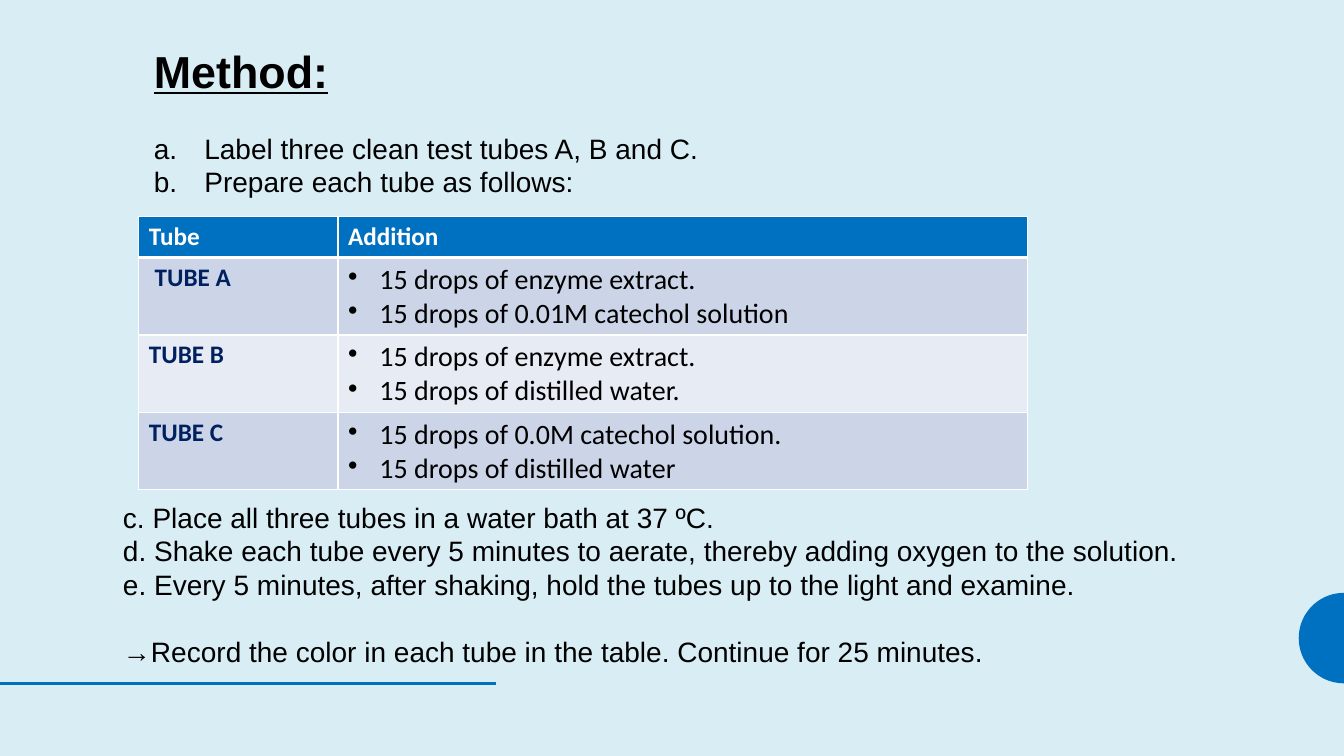
import math

from lxml import etree
from pptx import Presentation
from pptx import util as u
from pptx.dml.color import RGBColor
from pptx.enum import shapes, text
from pptx.oxml import ns

COLORS = {
    "background": "D9EDF5",
    "accent": "0070C0",
    "navy": "002060",
    "black": "000000",
    "white": "FFFFFF",
    "band_dark": "CCD5E8",
    "band_light": "E7EBF4",
}
PREPARATION = ["Label three clean test tubes A, B and C.", "Prepare each tube as follows:"]
STEPS = [
    "c. Place all three tubes in a water bath at 37 ºC.",
    "d. Shake each tube every 5 minutes to aerate, thereby adding oxygen to the solution.",
    "e. Every 5 minutes, after shaking, hold the tubes up to the light and examine.",
    "→Record the color in each tube in the table. Continue for 25 minutes.",
]
TUBES = [
    (" TUBE A", ["15 drops of enzyme extract.", "15 drops of 0.01M catechol solution"]),
    ("TUBE B", ["15 drops of enzyme extract.", "15 drops of distilled water."]),
    ("TUBE C", ["15 drops of 0.0M catechol solution.", "15 drops of distilled water"]),
]


def color(name):
    return RGBColor.from_string(COLORS[name])


def fill(target, name):
    target.fill.solid()
    target.fill.fore_color.rgb = color(name)


def style(para, size, name="black", font="Arial", bold=False, underline=False):
    for span in para.runs:
        span.font.name = font
        span.font.size = u.Pt(size)
        span.font.bold = bold
        span.font.underline = underline
        span.font.color.rgb = color(name)


def add_marker(para, indent, tag, **attributes):
    properties = para._p.get_or_add_pPr()
    properties.set("marL", str(int(indent)))
    properties.set("indent", str(-int(indent)))
    etree.SubElement(properties, ns.qn(tag), **attributes)


def add_text(page, left, top, width, height, lines):
    box = page.shapes.add_textbox(u.Cm(left), u.Cm(top), u.Cm(width), u.Cm(height))
    frame = box.text_frame
    frame.word_wrap = True
    frame.margin_left = frame.margin_right = frame.margin_top = frame.margin_bottom = 0
    frame.text = "\n".join(lines)
    return frame.paragraphs


def add_steps(page, left, top, width, height, lines):
    paras = add_text(page, left, top, width, height, lines)
    for para in paras:
        para.line_spacing = u.Pt(24)
        style(para, 20)
    return paras


def add_half_circle(page, center_x, center_y, radius):
    points = []
    for degrees in range(90, 271, 5):
        angle = math.radians(degrees)
        points.append((u.Cm(center_x + radius * math.cos(angle)),
                       u.Cm(center_y + radius * math.sin(angle))))
    builder = page.shapes.build_freeform(*points[0])
    builder.add_line_segments(points[1:], close=True)
    shape = builder.convert_to_shape()
    shape.shadow.inherit = False
    fill(shape, "accent")
    shape.line.fill.background()


def add_rule(page, top, length):
    rule = page.shapes.add_connector(
        shapes.MSO_CONNECTOR.STRAIGHT, 0, u.Cm(top), u.Cm(length), u.Cm(top))
    rule.line.color.rgb = color("accent")
    rule.line.width = u.Pt(2)
    etree.SubElement(rule._element.spPr, ns.qn("a:effectLst"))


def add_borders(cell, bottom=1, top=1):
    properties = cell._tc.get_or_add_tcPr()
    widths = {"a:lnL": 1, "a:lnR": 1, "a:lnT": top, "a:lnB": bottom}
    for position, (tag, width) in enumerate(widths.items()):
        border = etree.Element(ns.qn(tag), w=str(int(u.Pt(width))))
        solid = etree.SubElement(border, ns.qn("a:solidFill"))
        etree.SubElement(solid, ns.qn("a:srgbClr"), val=COLORS["white"])
        properties.insert(position, border)


def add_tube_table(page):
    rows = len(TUBES) + 1
    widths, heights = [5.02, 17.37], [1.03] + [1.95] * len(TUBES)
    table = page.shapes.add_table(rows, 2, u.Cm(3.5), u.Cm(5.46),
                                  u.Cm(sum(widths)), u.Cm(sum(heights))).table
    table.horz_banding = False
    for column, width in zip(table.columns, widths):
        column.width = u.Cm(width)
    for row, height in zip(table.rows, heights):
        row.height = u.Cm(height)

    for cell, label in zip(table.rows[0].cells, ["Tube", "Addition"]):
        cell.text_frame.text = label
        style(cell.text_frame.paragraphs[0], 18, "white", "Calibri", bold=True)
        fill(cell, "accent")
        add_borders(cell, bottom=3)

    for index, (tube, additions) in enumerate(TUBES, 1):
        name_cell, addition_cell = table.rows[index].cells
        name_cell.text_frame.text = tube
        style(name_cell.text_frame.paragraphs[0], 18, "navy", "Calibri", bold=True)
        addition_cell.text_frame.text = "\n".join(additions)
        for para in addition_cell.text_frame.paragraphs:
            add_marker(para, u.Cm(0.79), "a:buChar", char="•")
            style(para, 20, font="Calibri")
        for cell in (name_cell, addition_cell):
            fill(cell, "band_dark" if index % 2 else "band_light")
            add_borders(cell, top=3 if index == 1 else 1)


def main():
    deck = Presentation()
    deck.slide_width, deck.slide_height = u.Cm(33.87), u.Cm(19.05)
    page = deck.slides.add_slide(deck.slide_layouts[6])
    fill(page.background, "background")
    add_half_circle(page, 33.87, 16.08, 1.14)
    add_rule(page, 17.22, 12.5)

    heading = add_text(page, 3.88, 1.1, 27.9, 1.4, ["Method:"])
    style(heading[0], 32, bold=True, underline=True)
    for para in add_steps(page, 3.88, 3.31, 27.9, 1.7, PREPARATION):
        add_marker(para, u.Cm(1.27), "a:buAutoNum", type="alphaLcPeriod")
    steps = add_steps(page, 3.1, 12.6, 28.7, 4.3, STEPS)
    steps[-1].space_before = u.Pt(24)
    for para in steps:
        para.alignment = text.PP_ALIGN.JUSTIFY
    add_tube_table(page)
    deck.save("out.pptx")


if __name__ == "__main__":
    main()
